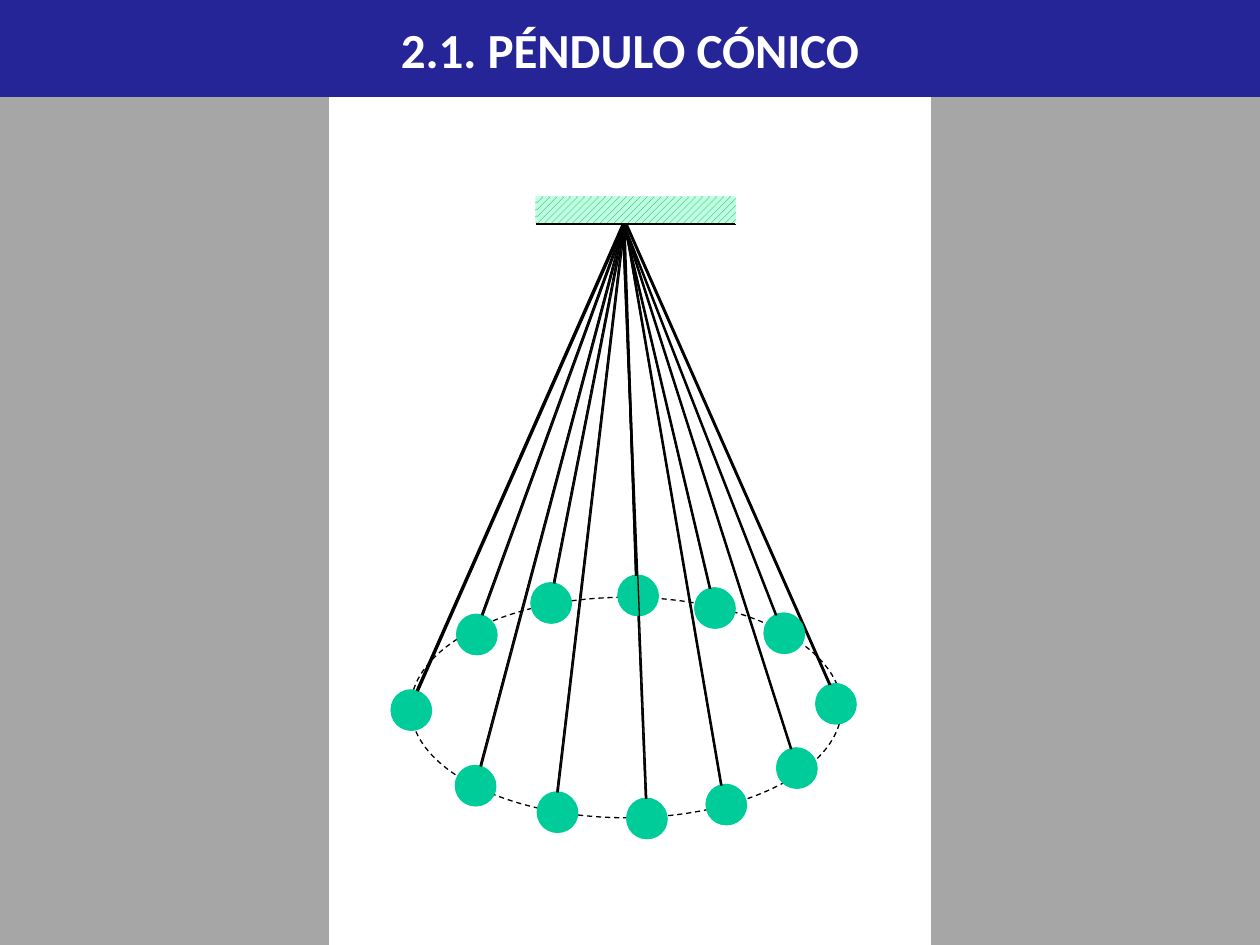
"""Build the conical pendulum slide: a title over twelve positions of one swinging bob."""
from lxml import etree
from pptx import Presentation
from pptx.dml.color import RGBColor
from pptx.enum import dml, shapes, text
from pptx.oxml import ns
from pptx.util import Inches, Pt

COLORS = {"title": "252597", "panel": "A6A6A6", "bob": "00CC99", "hatch": "009966",
          "ceiling": "BDFFDE", "ink": "000000", "white": "FFFFFF"}
BOB_SIZE = 0.32
PIVOT_Y = 1.78
LAYER_OFFSETS = [(0, 0), (0, 0.01), (0.01, 0.01)]

# pivot x, string end x, string end y, bob left, bob top, string width
PENDULUMS = [
    (4.94, 3.24, 5.63, 3.10, 5.47, 1),
    (4.95, 3.77, 5.02, 3.62, 4.87, 0.75),
    (4.95, 5.05, 4.74, 4.90, 4.56, 0.75),
    (4.95, 5.67, 4.83, 5.51, 4.66, 0.75),
    (4.95, 6.33, 6.11, 6.16, 5.93, 0.75),
    (4.96, 5.75, 6.40, 5.60, 6.22, 0.75),
    (4.94, 5.13, 6.50, 4.97, 6.33, 0.75),
    (4.95, 4.40, 6.45, 4.26, 6.28, 0.75),
    (4.95, 3.77, 6.23, 3.61, 6.07, 0.75),
    (4.97, 6.65, 5.58, 6.47, 5.42, 1),
    (4.95, 4.36, 4.79, 4.21, 4.62, 0.75),
    (4.95, 6.22, 5.04, 6.06, 4.86, 0.75),
]


def add_plain(parent, kind, left, top, width, height, color=None):
    shape = parent.add_shape(kind, Inches(left), Inches(top), Inches(width), Inches(height))
    shape.shadow.inherit = False
    shape.line.fill.background()
    if color:
        shape.fill.solid()
        shape.fill.fore_color.rgb = RGBColor.from_string(COLORS[color])
    else:
        shape.fill.background()
    return shape


def add_line(parent, x1, y1, x2, y2, width):
    line = parent.add_connector(shapes.MSO_CONNECTOR.STRAIGHT,
                                Inches(x1), Inches(y1), Inches(x2), Inches(y2))
    line.line.color.rgb = RGBColor.from_string(COLORS["ink"])
    line.line.width = Pt(width)
    etree.SubElement(line._element.spPr, ns.qn("a:effectLst"))


prs = Presentation()
prs.slide_width, prs.slide_height = Inches(10), Inches(7.5)
slide = prs.slides.add_slide(prs.slide_layouts[6])
RECT, OVAL = shapes.MSO_SHAPE.RECTANGLE, shapes.MSO_SHAPE.OVAL

orbit = add_plain(slide.shapes, OVAL, 3.26, 4.74, 3.42, 1.75)
orbit.line.color.rgb = RGBColor.from_string(COLORS["ink"])
orbit.line.width = Pt(0.75)
orbit.line.dash_style = dml.MSO_LINE.DASH

for dx, dy in LAYER_OFFSETS:
    support = slide.shapes.add_group_shape().shapes
    ceiling = add_plain(support, RECT, 4.25 + dx, 1.56, 1.58, 0.21)
    ceiling.fill.patterned()
    ceiling.fill.pattern = dml.MSO_PATTERN.WIDE_UPWARD_DIAGONAL
    ceiling.fill.fore_color.rgb = RGBColor.from_string(COLORS["hatch"])
    ceiling.fill.back_color.rgb = RGBColor.from_string(COLORS["ceiling"])
    add_line(support, 4.25 + dx, 1.77 + dy, 5.83 + dx, 1.77 + dy, 0.75)

    for pivot_x, end_x, end_y, bob_x, bob_y, width in PENDULUMS:
        pendulum = slide.shapes.add_group_shape().shapes
        add_line(pendulum, pivot_x + dx, PIVOT_Y + dy, end_x + dx, end_y + dy, width)
        add_plain(pendulum, OVAL, bob_x + dx, bob_y + dy, BOB_SIZE, BOB_SIZE, "bob")

for panel_x in (7.39, 0):
    add_plain(slide.shapes, RECT, panel_x, 0, 2.61, 7.5, "panel")

title = add_plain(slide.shapes, RECT, 0, 0, 10, 0.77, "title")
title.text_frame.word_wrap = False
title.text_frame.vertical_anchor = text.MSO_ANCHOR.MIDDLE
heading = title.text_frame.paragraphs[0]
heading.text = "2.1. PÉNDULO CÓNICO"
heading.alignment = text.PP_ALIGN.CENTER
heading.font.name = "Calibri"
heading.font.size = Pt(28)
heading.font.bold = True
heading.font.color.rgb = RGBColor.from_string(COLORS["white"])

prs.save("out.pptx")
